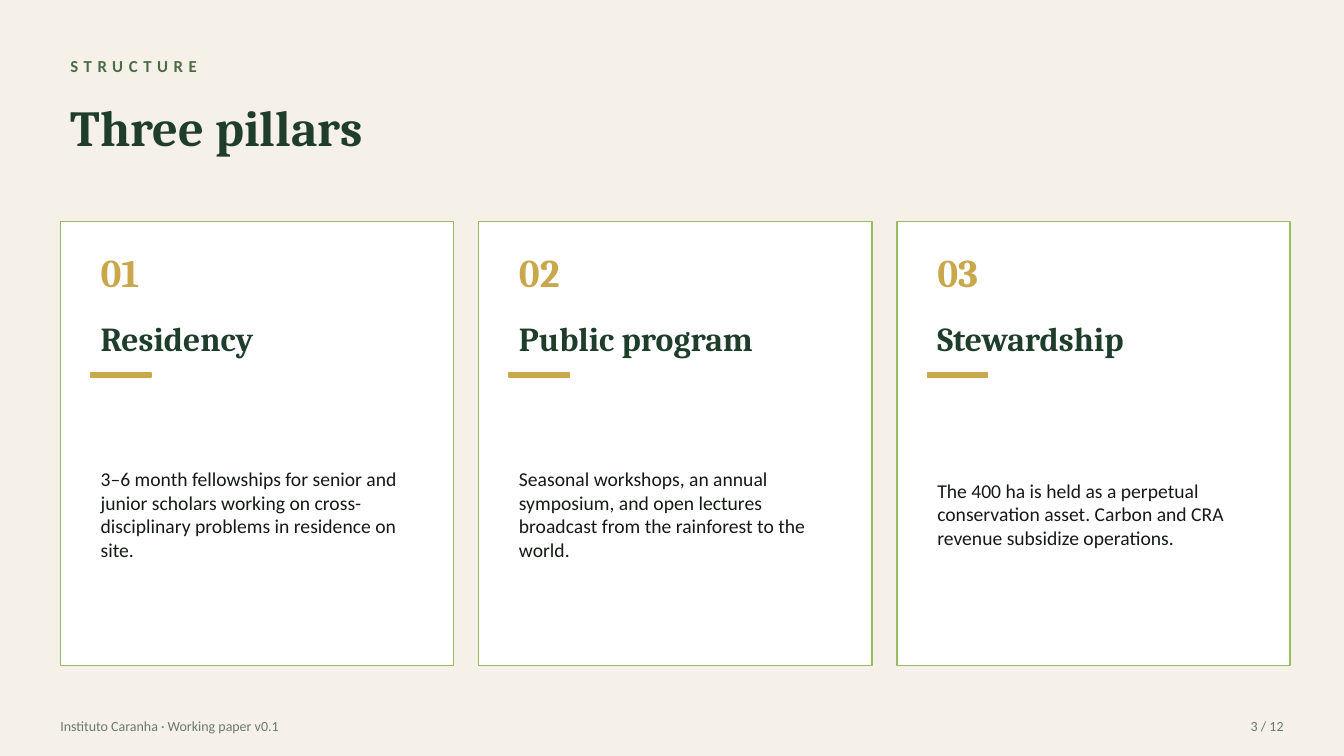
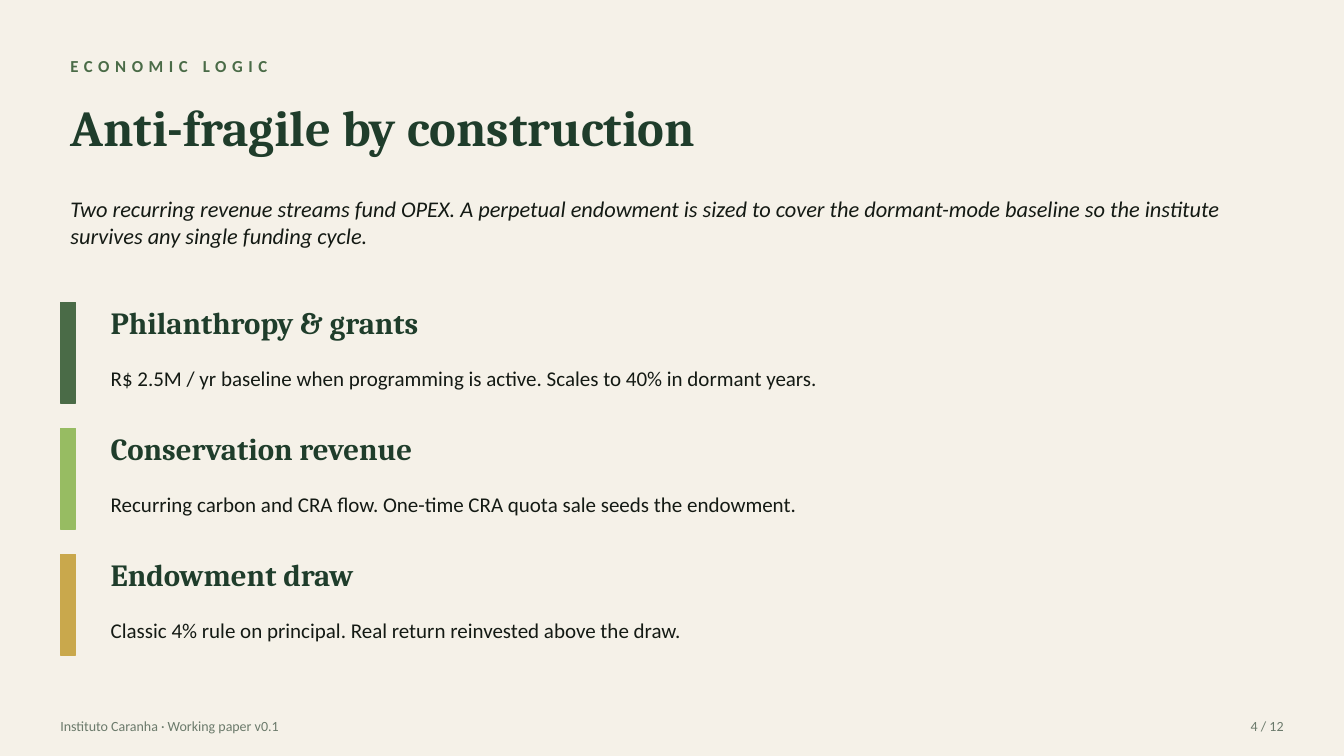
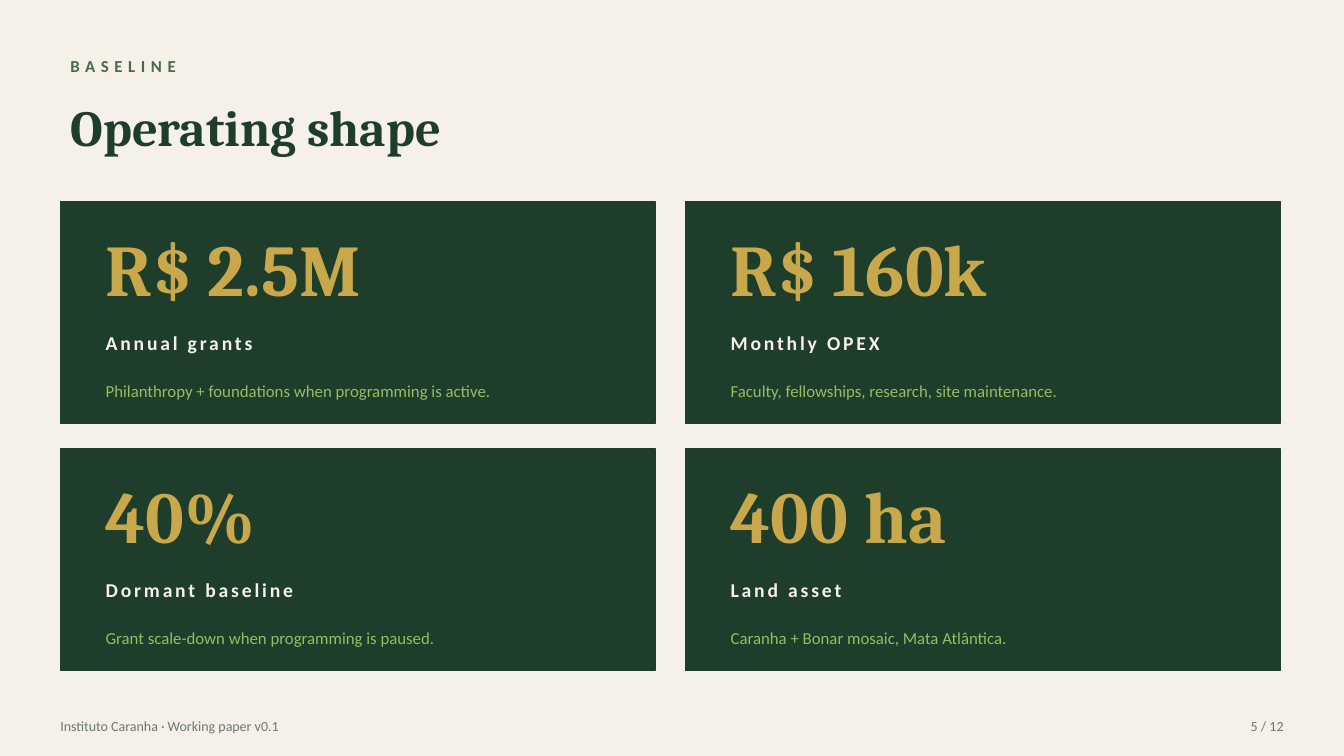
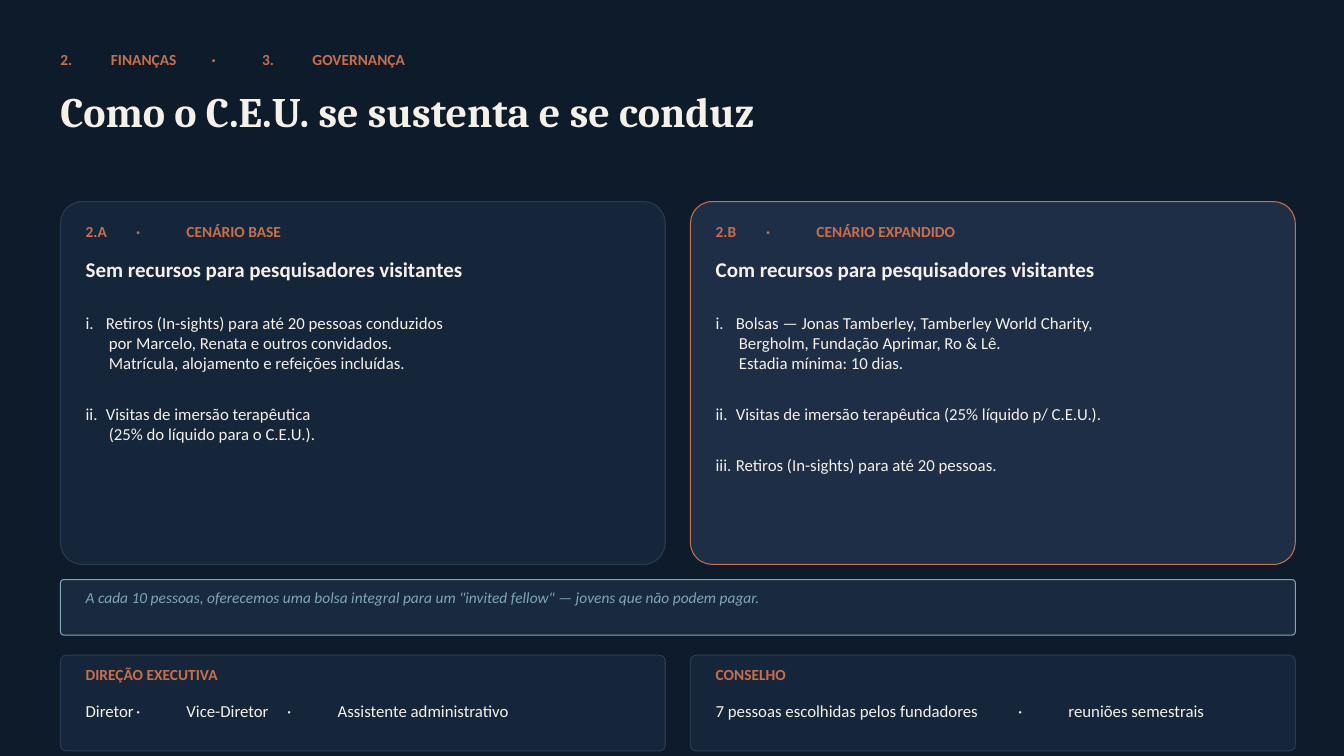
from dataclasses import dataclass, replace
from typing import NamedTuple, Sequence

from lxml import etree
from pptx import Presentation
from pptx import util as u
from pptx.dml.color import RGBColor
from pptx.enum import shapes, text
from pptx.oxml import ns

CELL = u.Inches(0.1)  # every length below counts cells of this square grid
COLUMNS, ROWS = 133.33, 75

PAPER = RGBColor(0xF5, 0xF1, 0xE8)
WHITE = RGBColor(0xFF, 0xFF, 0xFF)
FOREST = RGBColor(0x1F, 0x3D, 0x2B)
MOSS = RGBColor(0x4A, 0x6B, 0x47)
LEAF = RGBColor(0x97, 0xBC, 0x62)
GOLD = RGBColor(0xC9, 0xA8, 0x4C)
INK = RGBColor(0x14, 0x1A, 0x14)
SAGE = RGBColor(0x6B, 0x7A, 0x6B)
NIGHT = RGBColor(0x0E, 0x1B, 0x2A)
NAVY = RGBColor(0x16, 0x26, 0x3A)
SLATE = RGBColor(0x2A, 0x3A, 0x52)
INDIGO = RGBColor(0x1E, 0x2E, 0x46)
DEEP_BLUE = RGBColor(0x1A, 0x2A, 0x3E)
MIST = RGBColor(0x7E, 0xA8, 0xB5)
CLAY = RGBColor(0xC9, 0x6F, 0x4A)
CREAM = RGBColor(0xF5, 0xF0, 0xE8)

SERIF, SANS = "Cambria", "Calibri"
FOOTER = "Instituto Caranha · Working paper v0.1"
PAGE_COUNT = 12


class Box(NamedTuple):
    left: float
    top: float
    width: float
    height: float

    def inner(self, right: float, down: float, width: float, height: float) -> "Box":
        """A box placed relative to this one's top left corner."""
        return Box(self.left + right, self.top + down, width, height)

    def repeated(self, index: int, columns: int, gap: float, row_gap: float = 0) -> "Box":
        """The index-th cell of a table of equal boxes that starts here."""
        row, column = divmod(index, columns)
        return self._replace(left=self.left + column * (self.width + gap),
                             top=self.top + row * (self.height + row_gap))

    def lengths(self) -> list[int]:
        return [round(value * CELL) for value in self]


@dataclass(frozen=True)
class Style:
    size: float
    color: RGBColor
    font: str = SANS
    bold: bool = False
    italic: bool = False
    tracking: float = 0
    align: text.PP_ALIGN = text.PP_ALIGN.LEFT
    flush: bool = False  # no insets, text at the top


@dataclass(frozen=True)
class Line:
    text: str
    tabs: Sequence[float] = ()
    margin: float = 0
    indent: float = 0
    before: float = 0


KICKER = Style(12, MOSS, bold=True, tracking=4)
TITLE = Style(36, FOREST, SERIF, bold=True)
FOOT = Style(10, SAGE)
PILLAR_NUMBER = Style(28, GOLD, SERIF, bold=True)
PILLAR_NAME = replace(TITLE, size=24)
PILLAR_BODY = Style(14, INK)
LEAD = Style(16, INK, italic=True)
STREAM_NAME = replace(TITLE, size=22)
STREAM_BODY = Style(15, INK)
FIGURE = Style(52, GOLD, SERIF, bold=True)
FIGURE_LABEL = Style(14, PAPER, bold=True, tracking=2)
FIGURE_NOTE = Style(12, LEAF)
DARK_KICKER = Style(11, CLAY, bold=True, flush=True)
DARK_TITLE = Style(30, CREAM, SERIF, bold=True, flush=True)
DARK_HEADING = Style(15, CREAM, bold=True, flush=True)
DARK_BODY = Style(12, CREAM, flush=True)
DARK_NOTE = Style(11, MIST, italic=True, flush=True)


class Pillar(NamedTuple):
    name: str
    body: str


class Stream(NamedTuple):
    color: RGBColor
    name: str
    body: str


class Figure(NamedTuple):
    value: str
    label: str
    note: str


class Scenario(NamedTuple):
    fill: RGBColor
    line: RGBColor
    label: str
    heading: str
    items: Sequence[Sequence[str]]


class Body(NamedTuple):
    name: str
    members: str
    tabs: Sequence[float]


PILLARS = [
    Pillar("Residency", "3–6 month fellowships for senior and junior scholars working on "
           "cross-disciplinary problems in residence on site."),
    Pillar("Public program", "Seasonal workshops, an annual symposium, and open lectures "
           "broadcast from the rainforest to the world."),
    Pillar("Stewardship", "The 400 ha is held as a perpetual conservation asset. "
           "Carbon and CRA revenue subsidize operations."),
]
STREAMS = [
    Stream(MOSS, "Philanthropy & grants", "R$ 2.5M / yr baseline when programming is active. "
           "Scales to 40% in dormant years."),
    Stream(LEAF, "Conservation revenue", "Recurring carbon and CRA flow. "
           "One-time CRA quota sale seeds the endowment."),
    Stream(GOLD, "Endowment draw", "Classic 4% rule on principal. "
           "Real return reinvested above the draw."),
]
FIGURES = [
    Figure("R$ 2.5M", "Annual grants", "Philanthropy + foundations when programming is active."),
    Figure("R$ 160k", "Monthly OPEX", "Faculty, fellowships, research, site maintenance."),
    Figure("40%", "Dormant baseline", "Grant scale-down when programming is paused."),
    Figure("400 ha", "Land asset", "Caranha + Bonar mosaic, Mata Atlântica."),
]
SCENARIOS = [
    Scenario(NAVY, SLATE, "2.A\t·\tCENÁRIO BASE", "Sem recursos para pesquisadores visitantes", [
        ("i.\tRetiros (In-sights) para até 20 pessoas conduzidos",
         "por Marcelo, Renata e outros convidados.",
         "Matrícula, alojamento e refeições incluídas."),
        ("ii.\tVisitas de imersão terapêutica", "(25% do líquido para o C.E.U.)."),
    ]),
    Scenario(INDIGO, CLAY, "2.B\t·\tCENÁRIO EXPANDIDO",
             "Com recursos para pesquisadores visitantes", [
        ("i.\tBolsas — Jonas Tamberley, Tamberley World Charity,",
         "Bergholm, Fundação Aprimar, Ro & Lê.",
         "Estadia mínima: 10 dias."),
        ("ii.\tVisitas de imersão terapêutica (25% líquido p/ C.E.U.).",),
        ("iii.\tRetiros (In-sights) para até 20 pessoas.",),
    ]),
]
BODIES = [
    Body("DIREÇÃO EXECUTIVA", "Diretor\t·\tVice-Diretor\t·\tAssistente administrativo",
         (5.9, 7.5, 16.8, 18.3)),
    Body("CONSELHO", "7 pessoas escolhidas pelos fundadores\t·\treuniões semestrais",
         (27.2, 28.8)),
]


def set_indents(paragraph, line: Line) -> None:
    properties = paragraph._p.get_or_add_pPr()
    properties.set("marL", str(round(line.margin * CELL)))
    properties.set("indent", str(round(line.indent * CELL)))
    if line.tabs:
        stops = etree.SubElement(properties, ns.qn("a:tabLst"))
        for position in line.tabs:
            etree.SubElement(stops, ns.qn("a:tab"), pos=str(round(position * CELL)), algn="l")


def write(shape, lines: Sequence[Line], style: Style) -> None:
    """Fill a text box or placeholder with lines in one style."""
    frame = shape.text_frame
    frame.word_wrap = True
    if style.flush:
        frame.auto_size = text.MSO_AUTO_SIZE.SHAPE_TO_FIT_TEXT
        frame.vertical_anchor = text.MSO_ANCHOR.TOP
        frame.margin_left = frame.margin_right = frame.margin_top = frame.margin_bottom = 0
    else:
        frame.auto_size = text.MSO_AUTO_SIZE.NONE
        frame.vertical_anchor = text.MSO_ANCHOR.MIDDLE
    for index, line in enumerate(lines):
        paragraph = frame.add_paragraph() if index else frame.paragraphs[0]
        paragraph.text = line.text
        set_indents(paragraph, line)
        paragraph.alignment = style.align
        if line.before:
            paragraph.space_before = u.Pt(line.before)
        for run in paragraph.runs:
            font = run.font
            font.name, font.size = style.font, u.Pt(style.size)
            font.bold, font.italic = style.bold, style.italic
            font.color.rgb = style.color
            if style.tracking:
                run._r.get_or_add_rPr().set("spc", str(round(style.tracking * 100)))


def add_text(slide, box: Box, content: str, style: Style, tabs: Sequence[float] = ()) -> None:
    write(slide.shapes.add_textbox(*box.lengths()), [Line(content, tabs)], style)


def add_panel(slide, box: Box, fill: RGBColor, line: RGBColor, rounded: bool = False) -> None:
    kind = shapes.MSO_SHAPE.ROUNDED_RECTANGLE if rounded else shapes.MSO_SHAPE.RECTANGLE
    panel = slide.shapes.add_shape(kind, *box.lengths())
    if rounded:
        panel.adjustments[0] = 0.06
    panel.shadow.inherit = False
    panel.fill.solid()
    panel.fill.fore_color.rgb = fill
    panel.line.color.rgb = line
    panel.line.width = u.Pt(0.75 if rounded else 1)


def add_slide(presentation, background: RGBColor, title: str, title_box: Box, style: Style):
    slide = presentation.slides.add_slide(presentation.slide_layouts[5])
    slide.background.fill.solid()
    slide.background.fill.fore_color.rgb = background
    placeholder = slide.shapes.title
    placeholder.left, placeholder.top, placeholder.width, placeholder.height = title_box.lengths()
    write(placeholder, [Line(title)], style)
    return slide


def add_paper_slide(presentation, page: int, kicker: str, title: str, title_width: float = 100):
    """A light slide with its kicker, title and footer."""
    slide = add_slide(presentation, PAPER, title, Box(6, 8.5, title_width, 8), TITLE)
    add_text(slide, Box(6, 5, 60, 3), kicker, KICKER)
    add_text(slide, Box(5, 70.5, 80, 3), FOOTER, FOOT)
    add_text(slide, Box(COLUMNS - 15, 70.5, 10, 3), f"{page} / {PAGE_COUNT}",
             replace(FOOT, align=text.PP_ALIGN.RIGHT))
    return slide


def build_pillars(presentation) -> None:
    slide = add_paper_slide(presentation, 3, "STRUCTURE", "Three pillars")
    for index, pillar in enumerate(PILLARS):
        card = Box(6, 22, 39, 44).repeated(index, 3, 2.5)
        add_panel(slide, card, WHITE, LEAF)
        add_text(slide, card.inner(3, 2, 20, 6), f"{index + 1:02}", PILLAR_NUMBER)
        add_text(slide, card.inner(3, 8.5, 34, 6), pillar.name, PILLAR_NAME)
        add_panel(slide, card.inner(3, 15, 6, 0.4), GOLD, GOLD)
        add_text(slide, card.inner(3, 17, 33, 24), pillar.body, PILLAR_BODY)


def build_streams(presentation) -> None:
    slide = add_paper_slide(presentation, 4, "ECONOMIC LOGIC", "Anti-fragile by construction", 120)
    add_text(slide, Box(6, 17.5, 120, 9),
             "Two recurring revenue streams fund OPEX. A perpetual endowment is sized to cover "
             "the dormant-mode baseline so the institute survives any single funding cycle.", LEAD)
    for index, stream in enumerate(STREAMS):
        bar = Box(6, 30, 1.5, 10).repeated(index, 1, 0, 2.5)
        add_panel(slide, bar, stream.color, stream.color)
        add_text(slide, bar.inner(4, 0, 110, 4), stream.name, STREAM_NAME)
        add_text(slide, bar.inner(4, 4.5, 110, 6), stream.body, STREAM_BODY)


def build_figures(presentation) -> None:
    slide = add_paper_slide(presentation, 5, "BASELINE", "Operating shape")
    for index, figure in enumerate(FIGURES):
        card = Box(6, 20, 59, 22).repeated(index, 2, 3, 2.5)
        add_panel(slide, card, FOREST, FOREST)
        add_text(slide, card.inner(3.5, 1.5, 54, 10), figure.value, FIGURE)
        add_text(slide, card.inner(3.5, 12, 54, 4), figure.label, FIGURE_LABEL)
        add_text(slide, card.inner(3.5, 16, 54, 5.5), figure.note, FIGURE_NOTE)


def item_lines(items: Sequence[Sequence[str]]) -> list[Line]:
    """Numbered items: a hanging first line, then indented lines below it."""
    lines = []
    for first, *others in items:
        lines.append(Line(first, margin=2, indent=-2, before=22 if lines else 0))
        lines.extend(Line(other, margin=2.3) for other in others)
    return lines


def build_governance(presentation) -> None:
    slide = add_slide(presentation, NIGHT, "Como o C.E.U. se sustenta e se conduz",
                      Box(6, 8.5, 120, 9), DARK_TITLE)
    add_text(slide, Box(6, 5, 60, 3), "2.\tFINANÇAS\t·\t3.\tGOVERNANÇA", DARK_KICKER,
             (1.9, 9.8, 11.6, 13.5))
    for index, scenario in enumerate(SCENARIOS):
        card = Box(6, 20, 60, 36).repeated(index, 2, 2.5)
        add_panel(slide, card, scenario.fill, scenario.line, rounded=True)
        add_text(slide, card.inner(2.5, 2, 60, 3), scenario.label, DARK_KICKER, (2.8, 3.9))
        add_text(slide, card.inner(2.5, 5.5, 55, 5), scenario.heading, DARK_HEADING)
        items_box = slide.shapes.add_textbox(*card.inner(2.5, 11, 55, 24).lengths())
        write(items_box, item_lines(scenario.items), DARK_BODY)

    note = Box(6, 57.5, 122.5, 5.5)
    add_panel(slide, note, DEEP_BLUE, MIST, rounded=True)
    add_text(slide, note.inner(2.5, 0.8, 120, 4.5),
             'A cada 10 pessoas, oferecemos uma bolsa integral para um "invited fellow" '
             "— jovens que não podem pagar.", DARK_NOTE)

    for index, body in enumerate(BODIES):
        card = Box(6, 65, 60, 9.5).repeated(index, 2, 2.5)
        add_panel(slide, card, NAVY, SLATE, rounded=True)
        add_text(slide, card.inner(2.5, 1, 60, 3), body.name, DARK_KICKER)
        add_text(slide, card.inner(2.5, 4.5, 55, 5), body.members, DARK_BODY, body.tabs)


def main() -> None:
    presentation = Presentation()
    presentation.slide_width = round(COLUMNS * CELL)
    presentation.slide_height = round(ROWS * CELL)
    build_pillars(presentation)
    build_streams(presentation)
    build_figures(presentation)
    build_governance(presentation)
    presentation.save("out.pptx")


if __name__ == "__main__":
    main()
